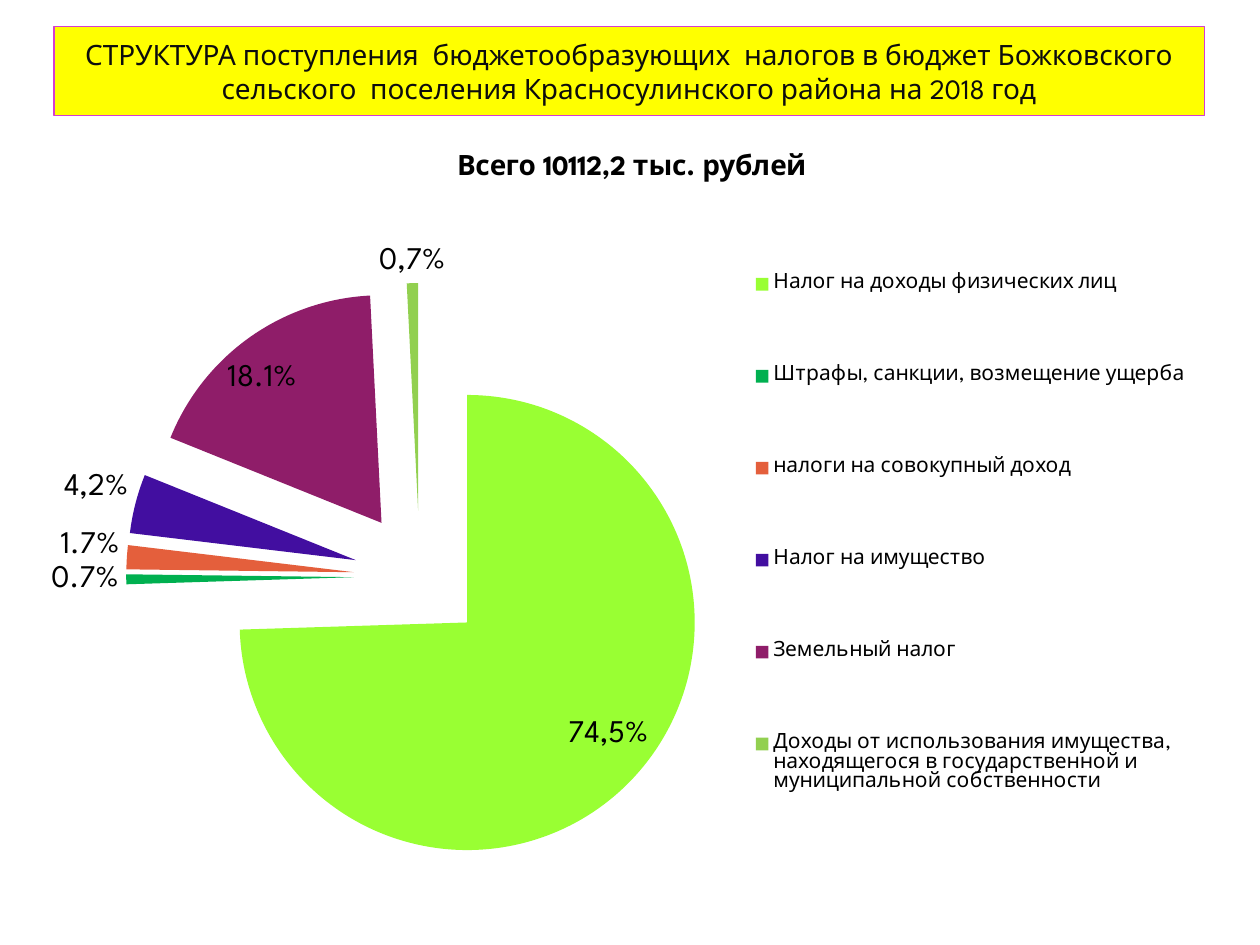
from lxml import etree
from pptx import Presentation
from pptx.chart.data import CategoryChartData
from pptx.dml.color import RGBColor
from pptx.enum.chart import XL_CHART_TYPE, XL_LABEL_POSITION, XL_LEGEND_POSITION
from pptx.enum.shapes import MSO_SHAPE
from pptx.enum.text import MSO_ANCHOR, PP_ALIGN
from pptx.oxml import parse_xml
from pptx.oxml.ns import qn
from pptx.util import Inches, Pt

PIE = XL_CHART_TYPE.PIE
BEST_FIT = XL_LABEL_POSITION.BEST_FIT
OUTSIDE_END = XL_LABEL_POSITION.OUTSIDE_END
LEGEND_RIGHT = XL_LEGEND_POSITION.RIGHT
RECTANGLE = MSO_SHAPE.RECTANGLE
MIDDLE = MSO_ANCHOR.MIDDLE
CENTER = PP_ALIGN.CENTER
FONT = "League Spartan"
CHART_NS = "http://schemas.openxmlformats.org/drawingml/2006/chart"


def color(value):
    return RGBColor.from_string(value)


def write_text(text_frame, text, size=18, bold=False, fill="000000"):
    paragraph = text_frame.paragraphs[0]
    paragraph.alignment = CENTER
    run = paragraph.add_run()
    run.text = text
    run.font.name = FONT
    run.font.size = Pt(size)
    run.font.bold = bold
    run.font.color.rgb = color(fill)


presentation = Presentation()
presentation.slide_width = Inches(10)
presentation.slide_height = Inches(7.5)
slide = presentation.slides.add_slide(presentation.slide_layouts[6])

# Heading banner
banner = slide.shapes.add_shape(
    RECTANGLE, Inches(0.43), Inches(0.21), Inches(9.13), Inches(0.71))
banner.shadow.inherit = False
banner.fill.solid()
banner.fill.fore_color.rgb = color("FFFF00")
banner.line.color.rgb = color("D53DD0")
banner.line.width = Pt(0.75)
banner.text_frame.word_wrap = True
banner.text_frame.vertical_anchor = MIDDLE
write_text(
    banner.text_frame,
    "СТРУКТУРА поступления  бюджетообразующих  налогов в бюджет Божковского "
    "сельского  поселения Красносулинского района на 2018 год",
    size=16, fill="0D0D0D")

# Revenue shares: name, value, slice colour, label text (None shows the percentage)
shares = [
    ("Налог на доходы физических лиц", 74.5, "99FF33", "74,5%"),
    ("Штрафы, санкции, возмещение ущерба", 0.7, "00B050", None),
    ("налоги на совокупный доход", 1.7, "E45F3C", None),
    ("Налог на имущество", 4.2, "420EA0", "4,2%"),
    ("Земельный налог", 18.1, "8F1D69", None),
    ("Доходы от использования имущества, находящегося в государственной "
     "и муниципальной собственности", 0.8, "92D050", "0,7%"),
]
chart_data = CategoryChartData()
chart_data.categories = [share[0] for share in shares]
chart_data.add_series("Series 1", [share[1] for share in shares])
chart = slide.shapes.add_chart(
    PIE, Inches(0.28), Inches(1.15), Inches(9.45), Inches(6.06), chart_data).chart
chart.font.name = FONT
chart.font.size = Pt(18)
chart.font.color.rgb = color("000000")

# Chart title and legend
chart.has_title = True
write_text(chart.chart_title.text_frame, "Всего 10112,2 тыс. рублей", size=16, bold=True)
chart.chart_title.include_in_layout = False
chart.has_legend = True
chart.legend.position = LEGEND_RIGHT
chart.legend.include_in_layout = False
chart.legend.font.name = FONT
chart.legend.font.size = Pt(12)
chart.legend.font.color.rgb = color("000000")

# Percentage labels
plot = chart.plots[0]
plot.vary_by_categories = True
plot.has_data_labels = False
series = plot.series[0]
labels = series.data_labels
labels.show_percentage = True
labels.show_value = False
labels.number_format = "0.0%"
labels.number_format_is_linked = False
labels.position = BEST_FIT
labels.font.name = FONT
labels.font.size = Pt(18)
labels.font.color.rgb = color("000000")

# Slice colours and typed labels; small slices carry theirs outside
for index, (name, value, fill, label) in enumerate(shares):
    point = series.points[index]
    point.format.fill.solid()
    point.format.fill.fore_color.rgb = color(fill)
    if label:
        write_text(point.data_label.text_frame, label)
        point.data_label.position = OUTSIDE_END if value < 5 else BEST_FIT

# Slices pulled apart
explosion = etree.Element(qn("c:explosion"), val="29")
series._element.find(qn("c:tx")).addnext(explosion)

# Fixed places of title, pie and legend, in percent of the chart
title = chart.chart_title._element
plot_area = chart._chartSpace.chart.plotArea
legend = chart.legend._element
for parent, previous, target, places in (
        (title, "c:tx", None, (35, 0.3)),
        (plot_area, None, "inner", (7.6, 18.1, 49.4, 76.9)),
        (legend, "c:legendPos", None, (60.3, 7.5, 36.5, 86.9))):
    for old_layout in parent.findall(qn("c:layout")):
        parent.remove(old_layout)
    items = [("layoutTarget", target)] if target else []
    items += [("xMode", "edge"), ("yMode", "edge")]
    items += [(tag, place / 100) for tag, place in zip("xywh", places)]
    settings = "".join(f'<c:{tag} val="{setting}"/>' for tag, setting in items)
    layout = parse_xml(
        f'<c:layout xmlns:c="{CHART_NS}"><c:manualLayout>{settings}'
        '</c:manualLayout></c:layout>')
    if previous:
        parent.find(qn(previous)).addnext(layout)
    else:
        parent.insert(0, layout)

presentation.save("out.pptx")
